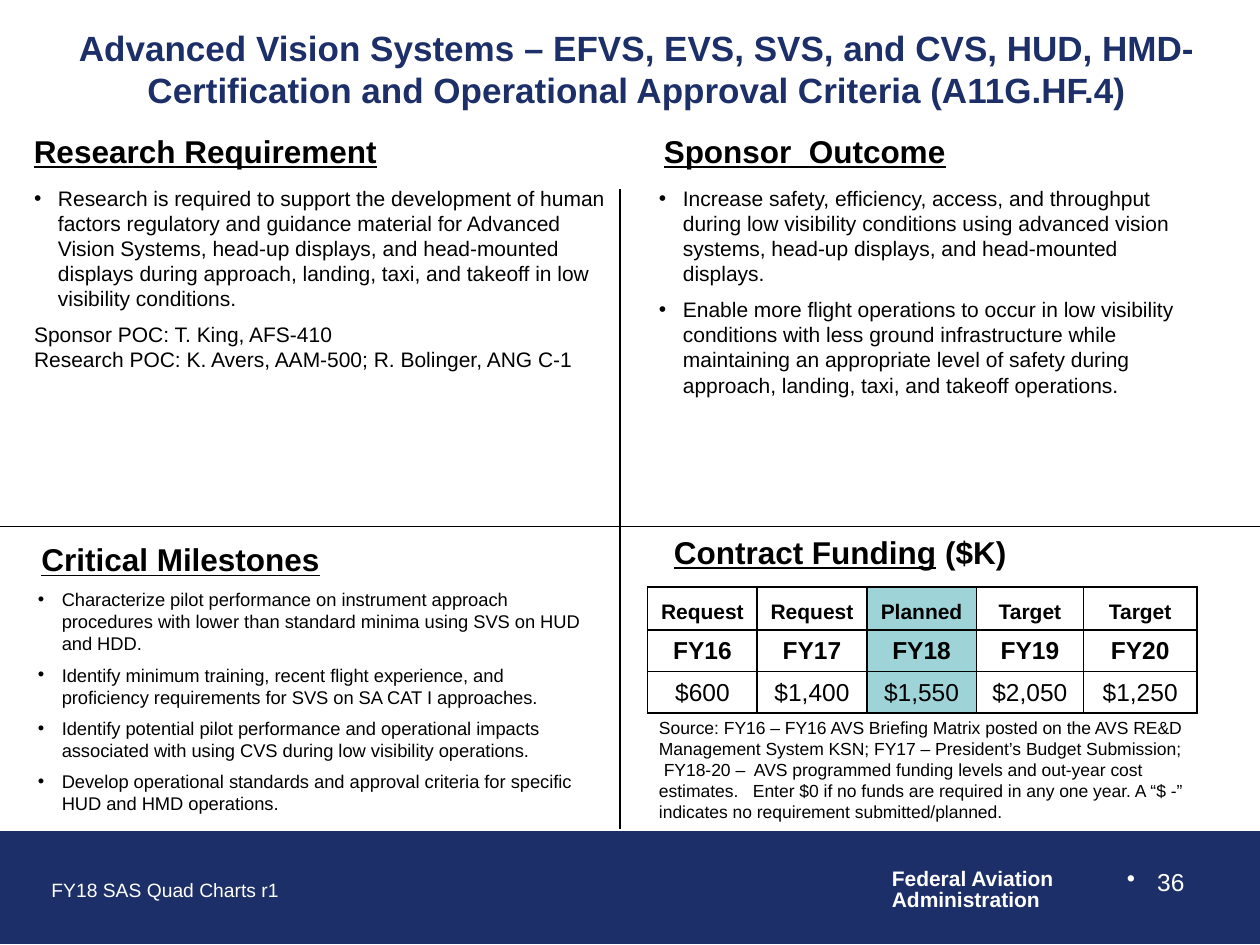
from lxml import etree
from pptx import Presentation
from pptx.dml.color import RGBColor
from pptx.enum.shapes import MSO_CONNECTOR, MSO_SHAPE
from pptx.enum.text import MSO_ANCHOR, MSO_AUTO_SIZE, PP_ALIGN
from pptx.oxml.ns import qn
from pptx.util import Inches, Pt

LEFT, MID, RIGHT = PP_ALIGN.LEFT, PP_ALIGN.CENTER, PP_ALIGN.RIGHT
TOP, CENTER, BOTTOM = MSO_ANCHOR.TOP, MSO_ANCHOR.MIDDLE, MSO_ANCHOR.BOTTOM
FIXED = MSO_AUTO_SIZE.NONE
RECT, LINE = MSO_SHAPE.RECTANGLE, MSO_CONNECTOR.STRAIGHT

THEME = {
    "font": "Arial",
    "navy": RGBColor(0x1D, 0x2F, 0x68),
    "teal": RGBColor(0x9E, 0xD3, 0xD7),
    "black": RGBColor(0, 0, 0),
    "white": RGBColor(255, 255, 255),
    "title": 20, "head": 18, "page": 14, "year": 14,
    "body": 12, "small": 10.5, "note": 10, "foot": 11,
}

deck = Presentation()
deck.slide_width, deck.slide_height = Inches(10), Inches(7.5)
col, row = deck.slide_width / 100, deck.slide_height / 100
slide = deck.slides.add_slide(deck.slide_layouts[4])
shapes = slide.shapes
slots = {slot.placeholder_format.idx: slot for slot in slide.placeholders}


def style(para, size, color="black", bold=False, align=LEFT, bullet=None, gap=0):
    props = para._p.get_or_add_pPr()
    indent = Inches(bullet or 0)
    props.set("marL", str(indent))
    props.set("indent", str(-indent))
    if bullet:
        etree.SubElement(props, qn("a:buChar")).set("char", "•")
    else:
        etree.SubElement(props, qn("a:buNone"))
    para.alignment = align
    para.space_before = Pt(gap)
    font = para.font
    font.name, font.size, font.bold = THEME["font"], Pt(THEME[size]), bold
    font.color.rgb = THEME[color]


def write(box, area, lines, size, anchor=TOP, wrap=True, **look):
    if box is None:
        box = shapes.add_textbox(0, 0, 0, 0)
    x, y, w, h = area
    box.left, box.top = int(x * col), int(y * row)
    box.width, box.height = int(w * col), int(h * row)
    frame = box.text_frame
    frame.auto_size, frame.word_wrap = FIXED, wrap
    frame.vertical_anchor = anchor
    frame.text = "\n".join(lines)
    for para in frame.paragraphs:
        style(para, size, **look)
    return frame


band = shapes.add_shape(RECT, 0, int(88 * row), int(100 * col), int(11.87 * row))
band.shadow.inherit = False
band.fill.solid()
band.fill.fore_color.rgb = band.line.color.rgb = THEME["navy"]
band.line.width = Pt(0.75)

agency = write(None, (69.8, 91.33, 15, 5.87),
               ["Federal Aviation", "Administration"], "body",
               wrap=False, color="white", bold=True)
for para in agency.paragraphs:
    para.line_spacing = 0.85
write(None, (3.1, 92.27, 20.2, 3.87), ["FY18 SAS Quad Charts r1"], "foot",
      wrap=False, color="white")
write(None, (71.7, 91.07, 23.3, 6.93), ["36"], "page",
      color="white", align=RIGHT, bullet=0.24)

write(slots[0], (4.2, 1.73, 92.7, 11.07),
      ["Advanced Vision Systems – EFVS, EVS, SVS, and CVS, HUD, HMD-"
       "Certification and Operational Approval Criteria (A11G.HF.4)"],
      "title", anchor=CENTER, color="navy", bold=True, align=MID)

heads = [
    ("Research Requirement", "", (1.7, 13.33, 50, 4.4)),
    ("Sponsor  Outcome", "", (51.7, 13.33, 46.7, 4.4)),
    ("Critical Milestones", "", (2.3, 56.53, 45, 5.07)),
    ("Contract Funding", " ($K)", (52.5, 55.73, 44.2, 7.2)),
]
for name, unit, area in heads:
    para = write(None, area, [name], "head", bold=True).paragraphs[0]
    para.runs[0].font.underline = True
    if unit:
        para.add_run().text = unit

for x1, y1, x2, y2 in [(49.2, 20, 49.2, 87.73), (0, 55.73, 100, 55.73)]:
    rule = shapes.add_connector(LINE, int(x1 * col), int(y1 * row),
                                int(x2 * col), int(y2 * row))
    rule.line.color.rgb, rule.line.width = THEME["black"], Pt(0.75)
    etree.SubElement(rule._element.spPr, qn("a:effectLst"))

lists = [
    (2, (1.7, 18.93, 47.5, 21.33), "body", 6, [
        "Research is required to support the development of human factors regulatory and guidance material for Advanced Vision Systems, head-up displays, and head-mounted displays during approach, landing, taxi, and takeoff in low visibility conditions."]),
    (4, (51.3, 18.93, 45.3, 21.6), "body", 6, [
        "Increase safety, efficiency, access, and throughput during low visibility conditions using advanced vision systems, head-up displays, and head-mounted displays.",
        "Enable more flight operations to occur in low visibility conditions with less ground infrastructure while maintaining an appropriate level of safety during approach, landing, taxi, and takeoff operations."]),
    (1, (2, 61.6, 45.5, 26.13), "small", 5.25, [
        "Characterize pilot performance on instrument approach procedures with lower than standard minima using SVS on HUD and HDD.",
        "Identify minimum training, recent flight experience, and proficiency requirements for SVS on SA CAT I approaches.",
        "Identify potential pilot performance and operational impacts associated with using CVS during low visibility operations.",
        "Develop operational standards and approval criteria for specific HUD and HMD operations."]),
]
for idx, area, size, gap, lines in lists:
    frame = write(slots[idx], area, lines, size, bullet=0.19)
    for para in frame.paragraphs[1:]:
        para.space_before = Pt(gap)

contacts = [("Sponsor POC: T. King, AFS-410", 6),
            ("Research POC: K. Avers, AAM-500; R. Bolinger, ANG C-1", 0)]
for text, gap in contacts:
    para = slots[2].text_frame.add_paragraph()
    para.text = text
    style(para, "body", gap=gap)

funds = [
    ("body", True, 4.53, ["Request", "Request", "Planned", "Target", "Target"]),
    ("year", True, 4.4, ["FY16", "FY17", "FY18", "FY19", "FY20"]),
    ("year", False, 4.4, ["$600", "$1,400", "$1,550", "$2,050", "$1,250"]),
]
table = shapes.add_table(3, 5, int(51.4 * col), int(62.13 * row),
                         int(43.6 * col), int(13.33 * row)).table
table.first_row = table.horz_banding = False
for part, width in zip(table.columns, [8.7, 8.7, 8.7, 8.5, 9]):
    part.width = int(width * col)
for r, (size, bold, height, texts) in enumerate(funds):
    table.rows[r].height = int(height * row)
    for c, text in enumerate(texts):
        cell = table.cell(r, c)
        cell.text = text
        cell.vertical_anchor = BOTTOM
        style(cell.text_frame.paragraphs[0], size, bold=bold, align=MID)
        props = cell._tc.get_or_add_tcPr()
        for side in "LRTB":
            edge = etree.SubElement(props, qn("a:ln" + side), w=str(Pt(1)))
            paint = etree.SubElement(edge, qn("a:solidFill"))
            etree.SubElement(paint, qn("a:srgbClr"), val=str(THEME["black"]))
        cell.fill.solid()
        cell.fill.fore_color.rgb = THEME["teal" if c == 2 else "white"]

write(slots[3], (51.3, 75.2, 43.7, 15.87),
      ["Source: FY16 – FY16 AVS Briefing Matrix posted on the AVS RE&D Management System KSN; FY17 – President’s Budget Submission;\v FY18-20 –  AVS programmed funding levels and out-year cost estimates.   Enter $0 if no funds are required in any one year. A “$ -” indicates no requirement submitted/planned."],
      "note")

deck.save("out.pptx")
